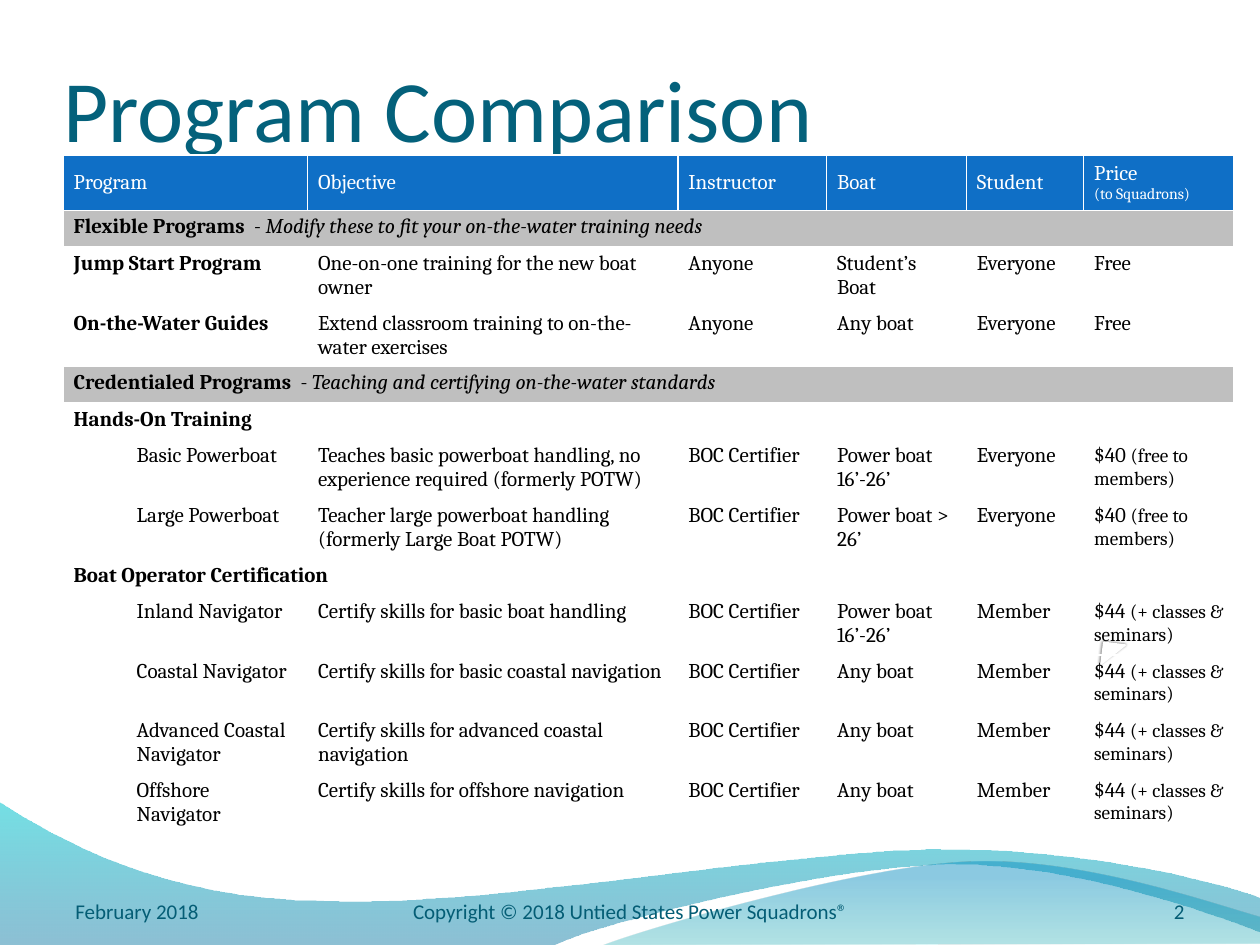
from lxml import etree
from pptx import Presentation
from pptx.dml.color import RGBColor
from pptx.enum import shapes, text
from pptx.oxml import ns
from pptx.util import Inches, Pt

TITLE_COLOR = RGBColor(0x04, 0x61, 0x7B)
FOOTER_COLOR = RGBColor(0x04, 0x5D, 0x75)
HEADER_FILL = RGBColor(0x0F, 0x6F, 0xC6)
BAND_FILL = RGBColor(0xBF, 0xBF, 0xBF)
WHITE = RGBColor(0xFF, 0xFF, 0xFF)
BLACK = RGBColor(0, 0, 0)

COLUMN_WIDTHS = [1.94, 2.94, 1.18, 1.11, 0.93, 1.19]
HEADERS = ["Program", "Objective", "Instructor", "Boat", "Student", "Price\n(to Squadrons)"]
CERTIFIER = "BOC Certifier"
FREE_TO_MEMBERS = ("$40 ", "(free to members)")
WITH_CLASSES = ("$44 ", "(+ classes & seminars)")
ROWS = [
    ("band", "Flexible Programs  ", "- ", "Modify these to fit your on-the-water training needs"),
    ("program", "Jump Start Program", "One-on-one training for the new boat owner",
     "Anyone", "Student’s Boat", "Everyone", ("Free",)),
    ("program", "On-the-Water Guides", "Extend classroom training to on-the-water exercises",
     "Anyone", "Any boat", "Everyone", ("Free",)),
    ("band", "Credentialed Programs  ", "- ", "Teaching and certifying on-the-water standards"),
    ("group", "Hands-On Training"),
    ("course", "Basic Powerboat",
     "Teaches basic powerboat handling, no experience required (formerly POTW)",
     CERTIFIER, "Power boat 16’-26’", "Everyone", FREE_TO_MEMBERS),
    ("course", "Large Powerboat", "Teacher large powerboat handling (formerly Large Boat POTW)",
     CERTIFIER, "Power boat > 26’", "Everyone", FREE_TO_MEMBERS),
    ("group", "Boat Operator Certification"),
    ("course", "Inland Navigator", "Certify skills for basic boat handling",
     CERTIFIER, "Power boat 16’-26’", "Member", WITH_CLASSES),
    ("course", "Coastal Navigator", "Certify skills for basic coastal navigation",
     CERTIFIER, "Any boat", "Member", WITH_CLASSES),
    ("course", "Advanced Coastal Navigator", "Certify skills for advanced coastal navigation",
     CERTIFIER, "Any boat", "Member", WITH_CLASSES),
    ("course", "Offshore Navigator", "Certify skills for offshore navigation",
     CERTIFIER, "Any boat", "Member", WITH_CLASSES),
]
ROW_HEIGHTS = {"band": 0.29, "group": 0.29, "program": 0.47, "course": 0.47}

FOOTERS = [
    ("February 2018", 0.5, 2.33, text.PP_ALIGN.LEFT),
    ("Copyright © 2018 Untied States Power Squadrons®", 3.17, 3.67, text.PP_ALIGN.CENTER),
    ("2", 8.67, 0.83, text.PP_ALIGN.RIGHT),
]

BACK_WAVE = [
    [(0, 7.5)],
    [(4.4, 7.5)],
    [(4.76, 7.32), (6.64, 6.86), (7.58, 6.86)],
    [(8.53, 6.86), (9.58, 7.24), (10, 7.4)],
    [(10.01, 7.13)],
    [(9.83, 7.05), (8.7, 6.73), (7.46, 6.74)],
    [(6.22, 6.74), (3.82, 7.21), (2.57, 7.15)],
    [(1.29, 7.14), (0.46, 6.66), (-0.01, 6.36)],
]
FRONT_WAVE = [
    [(4.79, 7.5)],
    [(5.09, 7.38), (6.82, 6.87), (7.69, 6.84)],
    [(8.56, 6.8), (9.61, 7.17), (10, 7.28)],
    [(10, 7.49)],
]
BACK_STOPS = [(0, RGBColor(0x00, 0x74, 0xA1), 45), (1, RGBColor(0x00, 0xC6, 0xCF), 55)]
FRONT_STOPS = [(0, RGBColor(0x00, 0xA1, 0xA9), 30), (0.8, RGBColor(0x00, 0x8B, 0xBF), 45)]


def add_alpha(color_element, percent):
    etree.SubElement(color_element, ns.qn("a:alpha"), val=str(percent * 1000))


def add_curved_outline(slide, segments):
    anchors = [(Inches(x), Inches(y)) for x, y in (segment[-1] for segment in segments)]
    builder = slide.shapes.build_freeform(*anchors[0])
    builder.add_line_segments(anchors[1:], close=True)
    outline = builder.convert_to_shape()
    lines = list(outline.element.iter(ns.qn("a:lnTo")))
    for line, segment in zip(lines, segments[1:]):
        if len(segment) == 1:
            continue
        curve = etree.Element(ns.qn("a:cubicBezTo"))
        for x, y in segment:
            etree.SubElement(curve, ns.qn("a:pt"), x=str(Inches(x) - outline.left),
                             y=str(Inches(y) - outline.top))
        line.getparent().replace(line, curve)
    return outline


def add_wave(slide, segments, stops):
    wave = add_curved_outline(slide, segments)
    wave.shadow.inherit = False
    wave.line.fill.background()
    wave.fill.gradient()
    wave.fill.gradient_angle = 90
    for stop, (position, color, opacity) in zip(wave.fill.gradient_stops, stops):
        stop.position = position
        stop.color.rgb = color
    for element, (position, color, opacity) in zip(wave.element.iter(ns.qn("a:srgbClr")), stops):
        add_alpha(element, opacity)


def add_corner_triangle(slide):
    triangle = slide.shapes.add_shape(shapes.MSO_SHAPE.RIGHT_TRIANGLE, Inches(8.75),
                                      Inches(5.11), Inches(0.17), Inches(0.17))
    triangle.rotation = 7
    triangle.fill.solid()
    triangle.fill.fore_color.rgb = WHITE
    triangle.line.color.rgb = WHITE
    triangle.line.width = Pt(1)
    triangle.shadow.inherit = False
    properties = triangle.element.spPr
    properties.find(ns.qn("a:xfrm")).set("flipV", "1")
    shadow = etree.SubElement(properties.find(ns.qn("a:effectLst")), ns.qn("a:outerShdw"),
                              blurRad=str(Pt(1.6)), dist=str(Pt(0.5)), dir=str(215 * 60000),
                              rotWithShape="0")
    add_alpha(etree.SubElement(shadow, ns.qn("a:srgbClr"), val="000000"), 47)


def style_run(run, size, color, name="Cambria", bold=False, italic=False):
    run.font.size = Pt(size)
    run.font.name = name
    run.font.color.rgb = color
    run.font.bold = bold
    run.font.italic = italic


def add_runs(cell, parts):
    paragraph = cell.text_frame.paragraphs[0]
    for content, style in parts:
        run = paragraph.add_run()
        run.text = content
        style_run(run, **{"size": 12, "color": BLACK, **style})


def fill_row(table, index, kind, *values):
    cells = table.rows[index].cells
    first = cells[0]
    if kind in ("band", "group"):
        first.merge(cells[len(COLUMN_WIDTHS) - 1])
        styles = ({"bold": True}, {}, {"italic": True})
        add_runs(first, zip(values, styles))
        if kind == "band":
            first.fill.solid()
            first.fill.fore_color.rgb = BAND_FILL
        return
    *labels, price = values
    for column, label in enumerate(labels):
        add_runs(cells[column], [(label, {"bold": kind == "program" and column == 0})])
    if kind == "course":
        first.text_frame.paragraphs[0]._p.get_or_add_pPr().set("marL", str(Inches(0.5)))
    price_cell = cells[len(labels)]
    price_cell.margin_right = Inches(0.01)
    add_runs(price_cell, zip(price, ({}, {"size": 11})))


def add_comparison_table(slide):
    heights = [0.44] + [ROW_HEIGHTS[row[0]] for row in ROWS]
    table = slide.shapes.add_table(len(heights), len(COLUMN_WIDTHS), Inches(0.5), Inches(1.23),
                                   Inches(sum(COLUMN_WIDTHS)), Inches(sum(heights))).table
    table.horz_banding = False
    for column, width in zip(table.columns, COLUMN_WIDTHS):
        column.width = Inches(width)
    for row, height in zip(table.rows, heights):
        row.height = Inches(height)
    for cell in table.iter_cells():
        cell.margin_left = cell.margin_right = Pt(6.1)
        cell.margin_top = cell.margin_bottom = Pt(2.65)
        cell.fill.background()
    for cell, label in zip(table.rows[0].cells, HEADERS):
        cell.text_frame.text = label
        cell.vertical_anchor = text.MSO_ANCHOR.MIDDLE
        cell.fill.solid()
        cell.fill.fore_color.rgb = HEADER_FILL
        for paragraph, size in zip(cell.text_frame.paragraphs, (12, 9)):
            style_run(paragraph.runs[0], size, WHITE)
    for index, row in enumerate(ROWS, start=1):
        fill_row(table, index, *row)


def add_footer(slide, label, left, width, alignment):
    box = slide.shapes.add_textbox(Inches(left), Inches(7.08), Inches(width), Inches(0.4))
    box.text_frame.word_wrap = True
    box.text_frame.text = label
    paragraph = box.text_frame.paragraphs[0]
    paragraph.alignment = alignment
    style_run(paragraph.runs[0], 12, FOOTER_COLOR, "Calibri")


def format_title(title):
    title.left, title.top, title.width, title.height = map(Inches, (0.5, 0.02, 9, 1.25))
    frame = title.text_frame
    frame.text = "Program Comparison"
    frame.auto_size = text.MSO_AUTO_SIZE.NONE
    frame.vertical_anchor = text.MSO_ANCHOR.BOTTOM
    frame.margin_left = frame.margin_right = frame.margin_bottom = 0
    frame.margin_top = Inches(0.05)
    frame.paragraphs[0].alignment = text.PP_ALIGN.LEFT
    style_run(frame.paragraphs[0].runs[0], 50, TITLE_COLOR, "Calibri")


def main():
    presentation = Presentation()
    presentation.slide_width, presentation.slide_height = Inches(10), Inches(7.5)
    slide = presentation.slides.add_slide(presentation.slide_layouts[5])
    format_title(slide.shapes.title)
    add_wave(slide, BACK_WAVE, BACK_STOPS)
    add_corner_triangle(slide)
    add_wave(slide, FRONT_WAVE, FRONT_STOPS)
    for footer in FOOTERS:
        add_footer(slide, *footer)
    add_comparison_table(slide)
    presentation.save("out.pptx")


if __name__ == "__main__":
    main()
